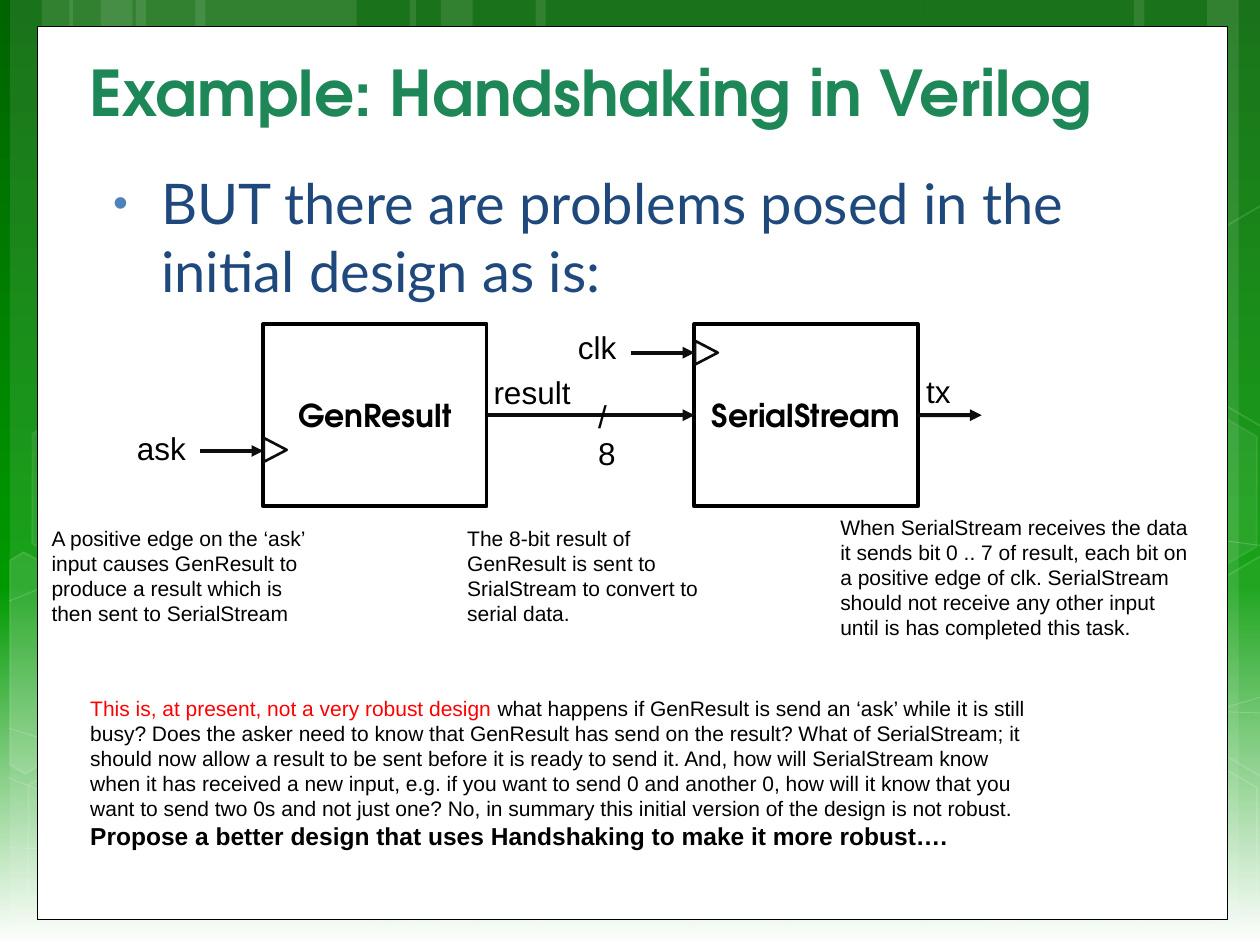
"""Build a slide on handshaking between two Verilog blocks."""
from copy import deepcopy
from typing import NamedTuple

from lxml import etree
from pptx import Presentation
from pptx.dml.color import RGBColor
from pptx.enum.shapes import MSO_CONNECTOR, MSO_SHAPE
from pptx.enum.text import MSO_ANCHOR, MSO_AUTO_SIZE, PP_ALIGN
from pptx.oxml.ns import qn
from pptx.util import Cm, Pt

RECT, HEX, TRI = MSO_SHAPE.RECTANGLE, MSO_SHAPE.HEXAGON, MSO_SHAPE.ISOSCELES_TRIANGLE
LINE = MSO_CONNECTOR.STRAIGHT
LOW, MID, TOP = MSO_ANCHOR.BOTTOM, MSO_ANCHOR.MIDDLE, MSO_ANCHOR.TOP
LEFT, CENTER = PP_ALIGN.LEFT, PP_ALIGN.CENTER
GROW, FIXED = MSO_AUTO_SIZE.SHAPE_TO_FIT_TEXT, MSO_AUTO_SIZE.NONE
WHITE, BLACK, INK = "FFFFFF", "000000", "0D0D0D"
WIDE, HIGH = 25.4, 19.05
BRAND = "TeX Gyre Adventor"


class Box(NamedTuple):
    left: float
    top: float
    width: float
    height: float


class Look(NamedTuple):
    fill: str = ""
    line: str = ""
    weight: float = 1
    shade: float = 100
    edge: float = 100


class Run(NamedTuple):
    text: str
    size: float = 18
    color: str = BLACK
    font: str = "Arial"
    bold: bool = False


class Label(NamedTuple):
    box: Box
    paras: list
    wrap: bool = False


class Arrow(NamedTuple):
    start: float
    end: float
    y: float


def hue(code: str) -> RGBColor:
    return RGBColor.from_string(code)


def fade(shape, where: str, amount: float) -> None:
    for node in shape.element.spPr.xpath(where + "a:solidFill/a:srgbClr"):
        etree.SubElement(node, qn("a:alpha"), val=str(int(amount * 1000)))


def paint(shape, look: Look) -> None:
    shape.shadow.inherit = False
    for part, code in ((shape.fill, look.fill), (shape.line.fill, look.line)):
        if code:
            part.solid()
            part.fore_color.rgb = hue(code)
        else:
            part.background()
    if look.line:
        shape.line.width = Pt(look.weight)
    for where, amount in (("./", look.shade), ("./a:ln/", look.edge)):
        if amount < 100:
            fade(shape, where, amount)


def draw(slide, kind, box: Box, look: Look, turn: float = 0):
    shape = slide.shapes.add_shape(kind, *map(Cm, box))
    shape.rotation = turn
    paint(shape, look)
    return shape


def trace(slide, points: list, look: Look, close: bool) -> None:
    dots = [(Cm(x), Cm(y)) for x, y in points]
    pen = slide.shapes.build_freeform(*dots[0])
    pen.add_line_segments(dots[1:], close=close)
    paint(pen.convert_to_shape(), look)


def write(frame, paras: list, anchor=TOP, align=LEFT) -> None:
    frame.vertical_anchor = anchor
    for spot, runs in enumerate(paras):
        para = frame.add_paragraph() if spot else frame.paragraphs[0]
        para.alignment = align
        for item in runs:
            run = para.add_run()
            run.text = item.text
            style = {"size": Pt(item.size), "name": item.font, "bold": item.bold}
            for key, value in style.items():
                setattr(run.font, key, value)
            run.font.color.rgb = hue(item.color)


def note(slide, label: Label):
    shape = slide.shapes.add_textbox(*map(Cm, label.box))
    shape.text_frame.word_wrap = label.wrap
    shape.text_frame.auto_size = GROW
    write(shape.text_frame, label.paras)
    return shape


def link(slide, arrow: Arrow):
    wire = slide.shapes.add_connector(LINE, *map(Cm, (arrow.start, arrow.y, arrow.end, arrow.y)))
    wire.line.color.rgb = hue(INK)
    wire.line.width = Pt(2.25)
    etree.SubElement(wire.line._get_or_add_ln(), qn("a:tailEnd"), type="triangle")
    etree.SubElement(wire.element.spPr, qn("a:effectLst"))
    return wire


def bullet(para) -> None:
    para.space_before = Pt(6.4)
    props = para._p.get_or_add_pPr()
    props.set("marL", str(Cm(0.97)))
    props.set("indent", str(-Cm(1.02)))
    tint = etree.SubElement(props, qn("a:buClr"))
    etree.SubElement(tint, qn("a:srgbClr"), val="4F81BD")
    etree.SubElement(props, qn("a:buSzPct"), val="76000")
    etree.SubElement(props, qn("a:buFont"), typeface="Arial")
    etree.SubElement(props, qn("a:buChar"), char="•")


def shade(slide) -> None:
    fill = slide.background.fill
    fill.gradient()
    fill.gradient_angle = 270
    stops = slide.element.xpath(".//a:gsLst")[0]
    stops.append(deepcopy(stops[0]))
    for stop, (spot, code) in zip(fill.gradient_stops, ((0, "006400"), (0.62, "009900"), (1, WHITE))):
        stop.position = spot
        stop.color.rgb = hue(code)


BARS = [(2.74, 4.45), (0.2, 1.27), (0.84, 2.11), (3.94, 4.45), (1.4, 1.27), (2.03, 2.11),
        (18.62, 4.45), (24.33, 1.27), (22.86, 2.11), (10.8, 7.82), (8.26, 1.27), (8.89, 2.11)]
WAVES = [
    [(0.18, 17.09), (4.83, 17.22), (11.63, 16.89), (20.12, 15.67), (25.58, 14)],
    [(0.18, 12.12), (3.07, 10.95), (8.81, 9.83), (16.61, 9.83), (25.58, 11.02)],
    [(0.15, 15.67), (8.48, 19.02)],
    [(0.18, 14.68), (3.25, 15.65), (9.07, 17.09), (15.95, 18.24), (21.67, 18.69), (25.58, 18.64)],
    [(6.15, 19.02), (7.67, 17.55), (11.94, 15.47), (17.27, 14.45), (22.5, 14.27), (25.55, 14.38)]]
CELLS = [(12.62, 14.96, 6, 12), (0.28, 15.01, 0, 12), (0.36, 7.92, 7, 8),
         (4.42, 15.04, 0, 12), (21.18, 15.06, 0, 12), (21.18, 7.98, 7, 8)]
CUTS = [
    (10, [(0.2, 11.3), (0.48, 11.13), (2.44, 12.24), (2.41, 14.48), (0.51, 15.6), (0.2, 15.42)]),
    (4, [(23.52, 12.32), (25.43, 11.2), (25.63, 11.33), (25.63, 15.57), (25.45, 15.67), (23.52, 14.55)]),
    (0, [(23.52, 5.26), (25.43, 4.14), (25.65, 4.27), (25.63, 8.51), (25.45, 8.61), (23.52, 7.49)])]
LABELS = [
    Label(Box(2.51, 8.53, 1.5, 1.02), [[Run("ask")]]),
    Label(Box(11.4, 6.48, 1.3, 1.02), [[Run("clk")]]),
    Label(Box(9.7, 7.39, 2.08, 1.02), [[Run("result")]]),
    Label(Box(18.42, 7.37, 1.02, 1.02), [[Run("tx")]]),
    Label(Box(11.81, 7.87, 0.86, 1.8), [[Run("/")], [Run("8")]]),
    Label(Box(0.79, 10.46, 5.89, 2.31), [[Run("A positive edge on the ‘ask’ input causes GenResult to produce a result which is then sent to SerialStream", 12)]], True),
    Label(Box(9.17, 10.46, 5.46, 2.31), [[Run("The 8-bit result of GenResult is sent to SrialStream to convert to serial data.", 12)]], True),
    Label(Box(16.69, 10.24, 7.59, 2.82), [[Run("When SerialStream receives the data it sends bit 0 .. 7 of result, each bit on a positive edge of clk. SerialStream should not receive any other input until is has completed this task.", 12)]], True),
    Label(Box(1.57, 13.89, 19.66, 3.43), [[
        Run("This is, at present, not a very robust design", 12, "FF0000"),
        Run(" what happens if GenResult is send an ‘ask’ while it is still busy? Does the asker need to know that GenResult has send on the result? What of SerialStream; it should now allow a result to be sent before it is ready to send it. And, how will SerialStream know when it has received a new input, e.g. if you want to send 0 and another 0, how will it know that you want to send two 0s and not just one? No, in summary this initial version of the design is not robust. ", 12),
        Run("Propose a better design that uses Handshaking to make it more robust….", 14, bold=True)]], True)]


def scene(slide) -> None:
    shade(slide)
    for left, width in BARS:
        draw(slide, RECT, Box(left, 0, width, HIGH), Look(WHITE, shade=10))
    for wave in WAVES:
        trace(slide, wave, Look(line=WHITE, weight=0.5, edge=20), False)
    for left, top, tone, edge in CELLS:
        look = Look(WHITE if tone else "", WHITE, 1, tone, edge)
        draw(slide, HEX, Box(left, top, 4.45, 3.86), look, 30).adjustments[0] = 0.285
    for tone, points in CUTS:
        trace(slide, points, Look(WHITE if tone else "", WHITE, 1, tone, 12), True)
    draw(slide, RECT, Box(0.76, 0.53, 23.98, 18.01), Look(WHITE, BLACK, 0.5))


def heading(slide) -> None:
    title = slide.shapes.title
    title.element.getparent().append(title.element)
    place = dict(zip(Box._fields, map(Cm, (1.55, 0.81, 22.35, 1.93))))
    for key, value in place.items():
        setattr(title, key, value)
    title.text_frame.auto_size = FIXED
    write(title.text_frame, [[Run("Example: Handshaking in Verilog", 36, "1D8757", BRAND, True)]], LOW)
    lead = Run("BUT there are problems posed in the initial design as is:", 32, "1F497D", "Lato")
    body = note(slide, Label(Box(2.03, 3.28, 21.39, 7.67), [[lead]], True))
    body.text_frame.auto_size = FIXED
    bullet(body.text_frame.paragraphs[0])


def block(slide, left: float, name: str):
    shape = draw(slide, RECT, Box(left, 6.53, 4.5, 3.68), Look(WHITE, BLACK, 2.25))
    write(shape.text_frame, [[Run(name, font=BRAND, bold=True)]], MID, CENTER)
    return shape


def main() -> None:
    deck = Presentation()
    deck.slide_width, deck.slide_height = Cm(WIDE), Cm(HIGH)
    slide = deck.slides.add_slide(deck.slide_layouts[5])
    scene(slide)
    heading(slide)
    source, sink = block(slide, 5.31, "GenResult"), block(slide, 14, "SerialStream")
    for arrow in (Arrow(4.04, 5.31, 9.09), Arrow(12.73, 14, 7.11)):
        link(slide, arrow)
    data = link(slide, Arrow(9.81, 14, 8.37))
    data.begin_connect(source, 3)
    data.end_connect(sink, 1)
    link(slide, Arrow(18.5, 19.79, 8.37)).begin_connect(sink, 3)
    for label in LABELS:
        note(slide, label)
    for left, top in ((5.31, 8.84), (14, 6.88)):
        draw(slide, TRI, Box(left, top, 0.48, 0.46), Look(WHITE, INK, 1.5), 90)
    deck.save("out.pptx")


if __name__ == "__main__":
    main()
